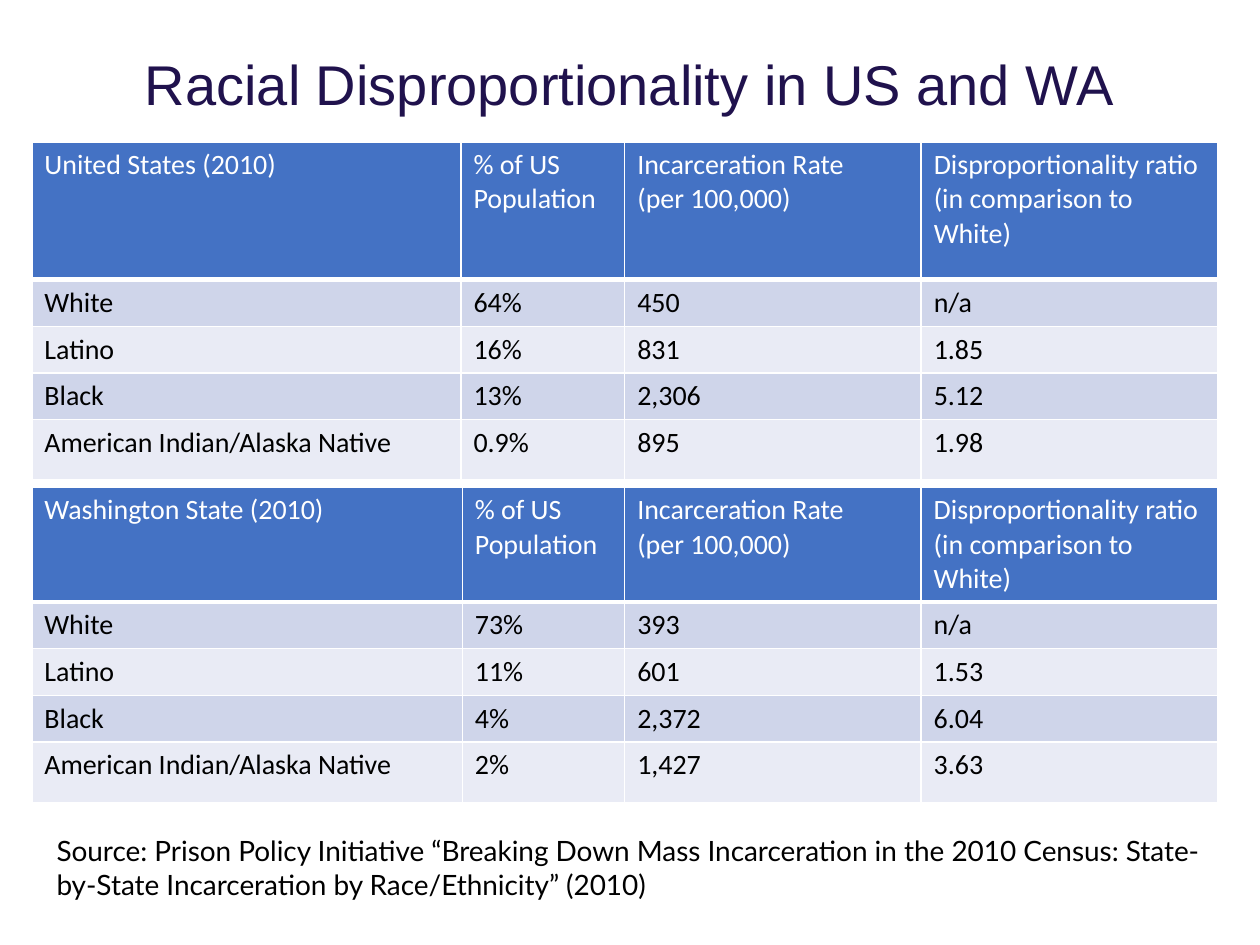
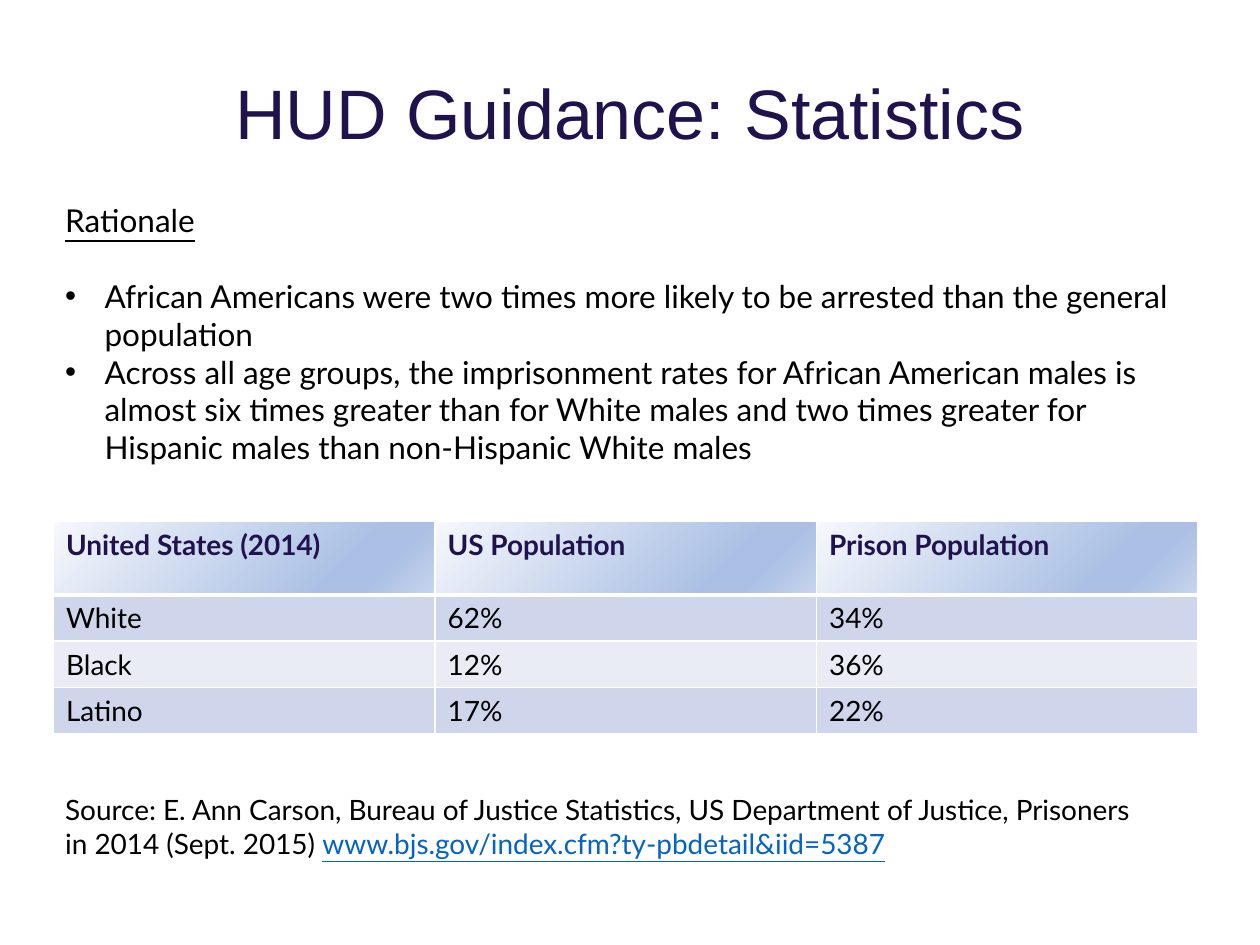
from pptx import Presentation
from pptx.dml.color import RGBColor
from pptx.enum.text import MSO_ANCHOR, PP_ALIGN
from pptx.oxml import parse_xml
from pptx.oxml.ns import nsdecls
from pptx.util import Pt

MIDDLE = MSO_ANCHOR.MIDDLE
CENTER = PP_ALIGN.CENTER
COLORS = {
    "navy": "20124D", "blue": "4472C4", "band": "CFD5EA", "pale": "E9EBF5",
    "white": "FFFFFF", "black": "000000", "link": "0563C1",
}
HEADER_GRADIENT = [(0, "F6F8FC"), (74, "ABC0E4"), (83, "ABC0E4"), (100, "C7D5ED")]


def write(para, text, size=16, font="Lato", color="black", bold=False, underline=False):
    span = para.add_run()
    span.text = text
    span.font.size = Pt(size)
    span.font.name = font
    span.font.bold = bold
    span.font.underline = underline
    span.font.color.rgb = RGBColor.from_string(COLORS[color])


def add_grid(page, left, top, widths, heights, rows, font, header_color, header_bold, gradient=None):
    frame = page.shapes.add_table(len(rows), len(widths), Pt(left), Pt(top),
                                  Pt(sum(widths)), Pt(sum(heights)))
    table = frame.table
    for column, width in zip(table.columns, widths):
        column.width = Pt(width)
    for index, (row, values) in enumerate(zip(table.rows, rows)):
        row.height = Pt(heights[index])
        header = index == 0
        for cell, value in zip(row.cells, values):
            properties = cell._tc.get_or_add_tcPr()
            for side in "LRTB":
                width = 3 if header and side == "B" or index == 1 and side == "T" else 1
                properties.append(parse_xml(
                    f'<a:ln{side} {nsdecls("a")} w="{Pt(width)}"><a:solidFill>'
                    f'<a:srgbClr val="{COLORS["white"]}"/></a:solidFill></a:ln{side}>'))
            if header and gradient:
                stops = "".join(f'<a:gs pos="{place * 1000}"><a:srgbClr val="{tint}"/></a:gs>'
                                for place, tint in gradient)
                properties.append(parse_xml(
                    f'<a:gradFill {nsdecls("a")} rotWithShape="1"><a:gsLst>{stops}</a:gsLst>'
                    '<a:lin ang="2700000" scaled="0"/></a:gradFill>'))
            else:
                fill = "blue" if header else "band" if index % 2 else "pale"
                cell.fill.solid()
                cell.fill.fore_color.rgb = RGBColor.from_string(COLORS[fill])
            for number, line in enumerate(value.split("\n")):
                para = cell.text_frame.add_paragraph() if number else cell.text_frame.paragraphs[0]
                write(para, line, font=font, bold=header and header_bold,
                      color=header_color if header else "black")


deck = Presentation()
deck.slide_width, deck.slide_height = Pt(720), Pt(540)
blank = deck.slide_layouts[6]

pages = []
for title, size, height in [("Racial Disproportionality in US and WA", 32, 56.2),
                            ("HUD Guidance: Statistics", 40, 90)]:
    page = deck.slides.add_slide(blank)
    box = page.shapes.add_textbox(Pt(36), Pt(21.6), Pt(648), Pt(height))
    box.text_frame.word_wrap = True
    box.text_frame.vertical_anchor = MIDDLE
    para = box.text_frame.paragraphs[0]
    para.alignment = CENTER
    para.line_spacing = 0.9
    write(para, title, size=size, font="Arial", color="navy")
    pages.append(page)
comparison, guidance = pages

rate_headings = ["% of US Population", "Incarceration Rate\n(per 100,000)",
                 "Disproportionality ratio (in comparison to White)"]
groups = ["White", "Latino", "Black", "American Indian/Alaska Native"]
regions = [
    ("United States (2010)", 81, [245.2, 93.6, 169.4, 169.4], 78.8,
     [("64%", "450", "n/a"), ("16%", "831", "1.85"), ("13%", "2,306", "5.12"),
      ("0.9%", "895", "1.98")]),
    ("Washington State (2010)", 278.2, [246, 92.8, 169.4, 169.4], 65.8,
     [("73%", "393", "n/a"), ("11%", "601", "1.53"), ("4%", "2,372", "6.04"),
      ("2%", "1,427", "3.63")]),
]
for region, top, widths, header_height, figures in regions:
    rows = [[region, *rate_headings]] + [[group, *values] for group, values in zip(groups, figures)]
    add_grid(comparison, 18.2, top, widths, [header_height, 26.7, 26.7, 26.7, 34.6], rows,
             "Calibri", "white", False)

add_grid(guidance, 30.6, 298, [218] * 3, [42, 26.4, 26.4, 26.4],
         [["United States (2014)", "US Population", "Prison Population"],
          ["White", "62%", "34%"], ["Black", "12%", "36%"], ["Latino", "17%", "22%"]],
         "Lato", "navy", True, HEADER_GRADIENT)

box = guidance.shapes.add_textbox(Pt(30.2), Pt(111.6), Pt(653.8), Pt(160))
box.text_frame.word_wrap = True
para = box.text_frame.paragraphs[0]
para.space_after = Pt(21.6)
write(para, "Rationale", size=18, underline=True)
for reason in [
    "African Americans were two times more likely to be arrested than the general population",
    "Across all age groups, the imprisonment rates for African American males is almost six times "
    "greater than for White males and two times greater for Hispanic males than non-Hispanic White males",
]:
    para = box.text_frame.add_paragraph()
    properties = para._p.get_or_add_pPr()
    properties.set("marL", str(Pt(22.5)))
    properties.set("indent", str(Pt(-22.5)))
    properties.append(parse_xml(f'<a:buFont {nsdecls("a")} typeface="Arial"/>'))
    properties.append(parse_xml(f'<a:buChar {nsdecls("a")} char="•"/>'))
    write(para, reason, size=18)

sources = [
    (comparison, 25.2, 473, 671, 60,
     [("Source: Prison Policy Initiative “Breaking Down Mass Incarceration in the 2010 Census: "
       "State-by-State Incarceration by Race/Ethnicity” (2010)", {})]),
    (guidance, 30.2, 449.3, 635.8, 46,
     [("Source: E. Ann Carson, Bureau of Justice Statistics, US Department of Justice, "
       "Prisoners in 2014 (Sept. 2015) ", {}),
      ("www.bjs.gov/index.cfm?ty-pbdetail&iid=5387", {"color": "link", "underline": True})]),
]
for page, left, top, width, height, parts in sources:
    box = page.shapes.add_textbox(Pt(left), Pt(top), Pt(width), Pt(height))
    box.text_frame.word_wrap = True
    for text, style in parts:
        write(box.text_frame.paragraphs[0], text, **style)

deck.save("out.pptx")
